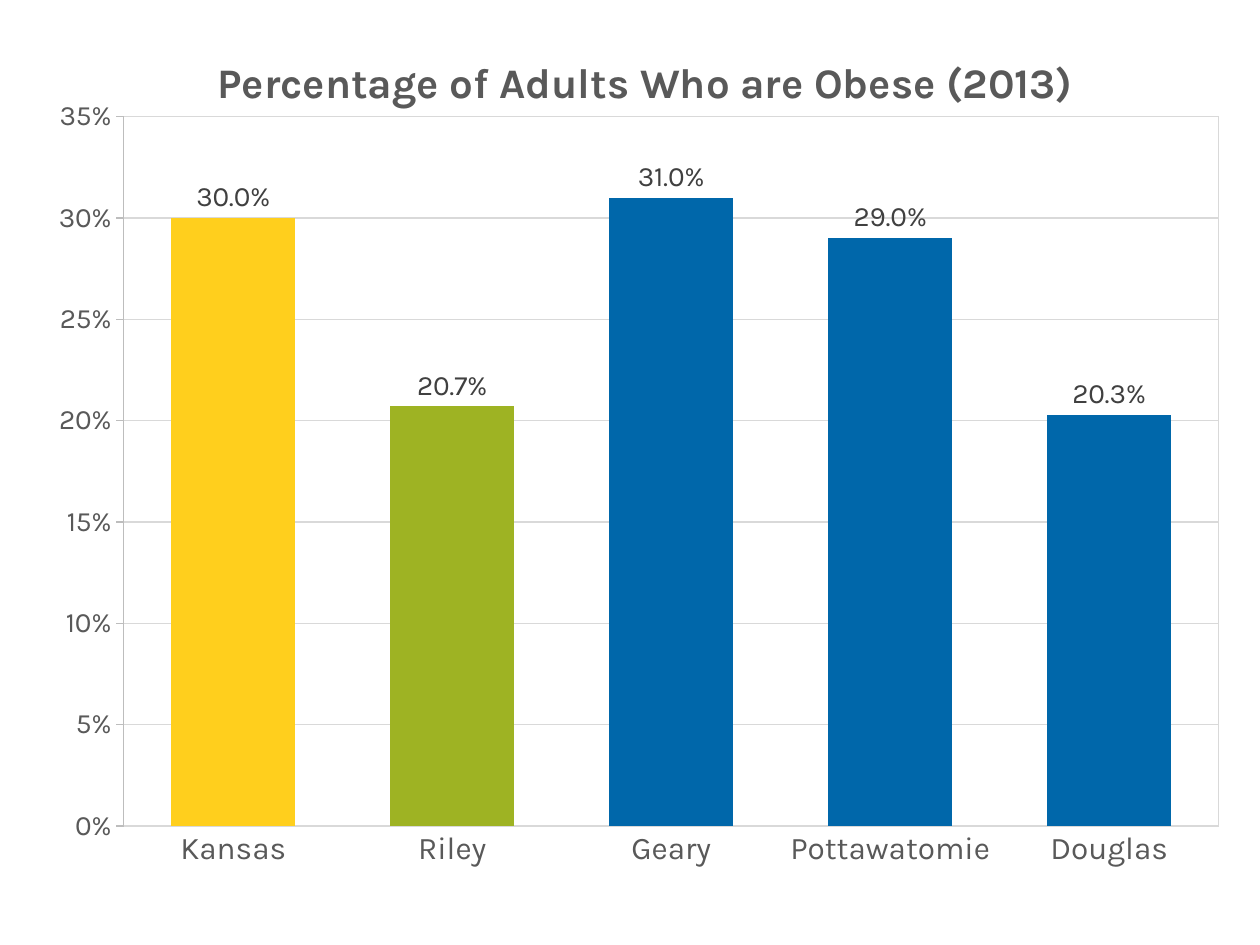
from dataclasses import dataclass

from lxml import etree
from pptx import Presentation
from pptx import util as u
from pptx.chart.data import CategoryChartData
from pptx.dml.color import RGBColor
from pptx.enum import chart as charts
from pptx.oxml import parse_xml
from pptx.oxml.ns import nsdecls, qn


@dataclass(frozen=True)
class Theme:
    font: str = "Karla"
    base_font: str = "Cabin"
    text: str = "595959"
    label: str = "404040"
    grid: str = "D9D9D9"
    axis: str = "BDBDBD"
    state: str = "FFCF1D"
    home_county: str = "9EB323"
    peer_county: str = "0067AA"
    title_size: int = 24
    category_size: int = 18
    value_size: int = 16
    base_size: int = 10
    line_width: float = 0.75


theme = Theme()


def write(font, text=None, frame=None, size=theme.value_size, color=theme.text,
          name=theme.font, bold=False):
    """Format a font, or put text into a frame and format that run."""
    if frame is not None:
        run = frame.paragraphs[0].add_run()
        run.text = text
        font = run.font
    font.name = name
    font.size = u.Pt(size)
    font.bold = bold
    font.color.rgb = RGBColor.from_string(color)


def manual_layout(**settings):
    """Return a chart layout element with fractions of the chart area."""
    layout = parse_xml(f"<c:layout {nsdecls('c')}><c:manualLayout/></c:layout>")
    for tag, value in settings.items():
        etree.SubElement(layout[0], qn(f"c:{tag}")).set("val", str(value))
    return layout


presentation = Presentation()
presentation.slide_width = u.Pt(720)
presentation.slide_height = u.Pt(540)
slide = presentation.slides.add_slide(presentation.slide_layouts[6])

# Region, share of adults, bar colour
regions = [
    ("Kansas", 0.30, theme.state),
    ("Riley", 0.207, theme.home_county),
    ("Geary", 0.31, theme.peer_county),
    ("Pottawatomie", 0.29, theme.peer_county),
    ("Douglas", 0.203, theme.peer_county),
]
names, shares, colors = zip(*regions)
data = CategoryChartData(number_format="0.0%")
data.categories = names
data.add_series("Series 1", shares)
chart = slide.shapes.add_chart(
    charts.XL_CHART_TYPE.COLUMN_CLUSTERED,
    u.Pt(5.76), u.Pt(5.76), u.Pt(714.24), u.Pt(534.24), data,
).chart
write(chart.font, size=theme.base_size, color="000000", name=theme.base_font)
chart.has_legend = False

# Title
chart.has_title = True
title = chart.chart_title
write(None, "Percentage of Adults Who are Obese (2013)", title.text_frame,
      size=theme.title_size, bold=True)
title.include_in_layout = False
title_element = title._element
for layout in title_element.findall(qn("c:layout")):
    title_element.remove(layout)
title_element.find(qn("c:tx")).addnext(
    manual_layout(xMode="edge", yMode="edge", x=0.16, y=0.04))

# Bars and their labels
plot = chart.plots[0]
plot.gap_width = 77
plot.vary_by_categories = False
series = plot.series[0]
for index, color in enumerate(colors):
    fill = series.points[index].format.fill
    fill.solid()
    fill.fore_color.rgb = RGBColor.from_string(color)
labels = series.data_labels
labels.show_value = True
labels.number_format = "0.0%"
labels.number_format_is_linked = False
labels.position = charts.XL_LABEL_POSITION.OUTSIDE_END
write(labels.font, color=theme.label)

# Axes and gridlines
category_axis, value_axis = chart.category_axis, chart.value_axis
category_axis.major_tick_mark = charts.XL_TICK_MARK.NONE
write(category_axis.tick_labels.font, size=theme.category_size)
value_axis.minimum_scale = 0
value_axis.maximum_scale = 0.35
value_axis.major_unit = 0.05
value_axis.major_tick_mark = charts.XL_TICK_MARK.OUTSIDE
value_axis.tick_labels.number_format = "0%"
value_axis.tick_labels.number_format_is_linked = False
write(value_axis.tick_labels.font)
value_axis.has_major_gridlines = True
for line, color in [
    (category_axis.format.line, theme.grid),
    (value_axis.format.line, theme.axis),
    (value_axis.major_gridlines.format.line, theme.grid),
]:
    line.color.rgb = RGBColor.from_string(color)
    line.width = u.Pt(theme.line_width)

# Plot area: fixed inner frame with a thin border
plot_area = chart._chartSpace.find(".//" + qn("c:plotArea"))
for layout in plot_area.findall(qn("c:layout")):
    plot_area.remove(layout)
plot_area.insert(0, manual_layout(
    layoutTarget="inner", xMode="edge", yMode="edge",
    x=0.091, y=0.114, w=0.876, h=0.759))
plot_area.append(parse_xml(
    f"<c:spPr {nsdecls('c', 'a')}><a:noFill/>"
    f'<a:ln w="{u.Pt(theme.line_width)}"><a:solidFill>'
    f'<a:srgbClr val="{theme.grid}"/></a:solidFill></a:ln></c:spPr>'))

presentation.save("out.pptx")
